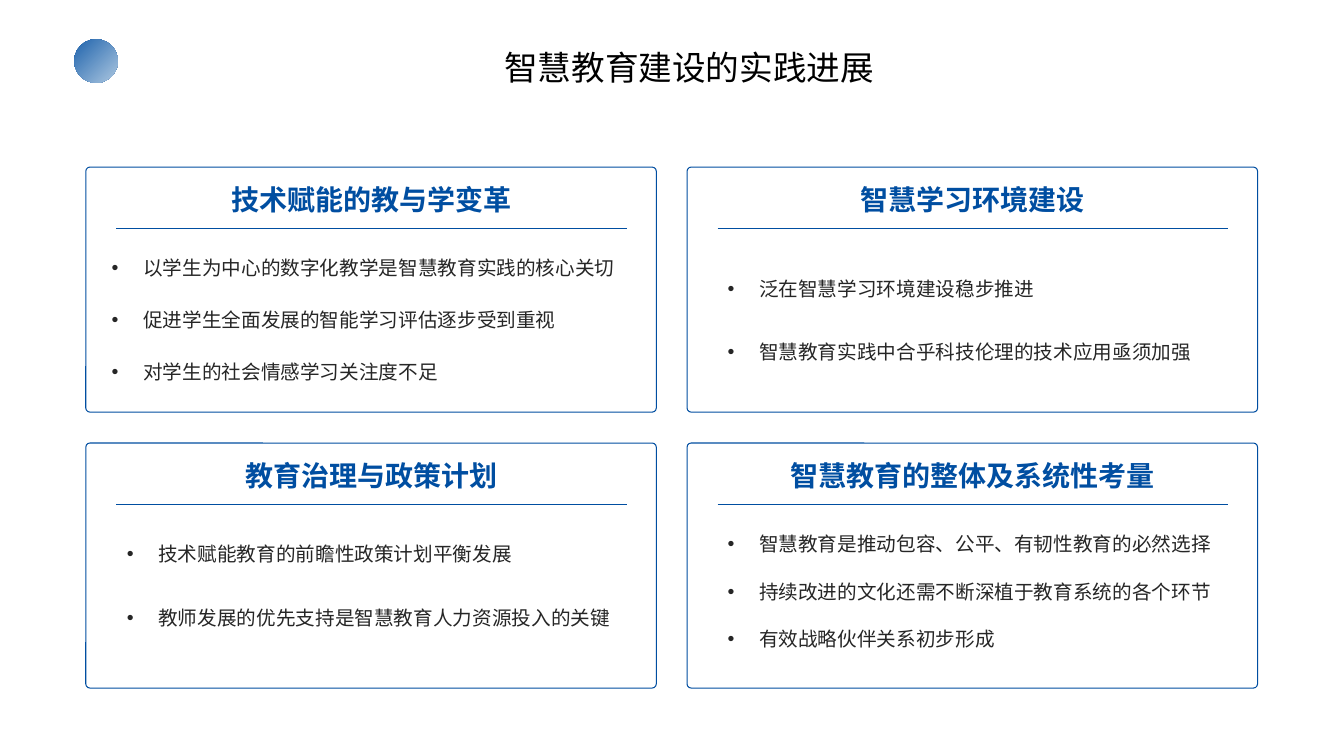
from dataclasses import dataclass

from lxml import etree
from pptx import Presentation
from pptx.dml.color import RGBColor
from pptx.enum.shapes import MSO_CONNECTOR, MSO_SHAPE
from pptx.enum.text import MSO_ANCHOR, PP_ALIGN
from pptx.oxml.ns import qn
from pptx.util import Pt

STRAIGHT = MSO_CONNECTOR.STRAIGHT
OVAL = MSO_SHAPE.OVAL
ROUNDED = MSO_SHAPE.ROUNDED_RECTANGLE
TOP, MIDDLE = MSO_ANCHOR.TOP, MSO_ANCHOR.MIDDLE
CENTER, JUSTIFY = PP_ALIGN.CENTER, PP_ALIGN.JUSTIFY


@dataclass(frozen=True)
class Theme:
    """Colours, fonts and type sizes of the slide."""
    blue: str = "004EA1"
    pale: str = "CCDDEC"
    white: str = "FFFFFF"
    black: str = "000000"
    ink: str = "262626"
    font: str = "Noto Sans CJK SC"
    title_font: str = "Times New Roman"
    title_size: float = 24
    heading_size: float = 20
    body_size: float = 14
    line_width: float = 0.75
    indent: float = 22.5


CARD_WIDTH, CARD_HEIGHT = 407.5, 175
CARD_LEFT, CARD_TOP = 61.3, 119.4
COLUMN_STEP, ROW_STEP = 429.5, 197.1

# heading, text offset from the card, text width, (line spacing, bullet)
CARDS = [
    ("技术赋能的教与学变革", (11.4, 51.2), 375, [
        (1.5, "以学生为中心的数字化教学是智慧教育实践的核心关切"),
        (1.5, "促进学生全面发展的智能学习评估逐步受到重视"),
        (1.5, "对学生的社会情感学习关注度不足")]),
    ("智慧学习环境建设", (21.8, 57.7), 364.5, [
        (2, "泛在智慧学习环境建设稳步推进"),
        (2, "智慧教育实践中合乎科技伦理的技术应用亟须加强")]),
    ("教育治理与政策计划", (22.2, 62.2), 364.5, [
        (1.3, "技术赋能教育的前瞻性政策计划平衡发展"),
        (2, "教师发展的优先支持是智慧教育人力资源投入的关键")]),
    ("智慧教育的整体及系统性考量", (21.8, 55), 364.5, [
        (1.3, "智慧教育是推动包容、公平、有韧性教育的必然选择"),
        (1.3, "持续改进的文化还需不断深植于教育系统的各个环节"),
        (1.3, "有效战略伙伴关系初步形成")]),
]


def write_text(paragraph, text, *, font, size, color, bold=False,
               align=CENTER, spacing=1.0, before=0, bullet_indent=0):
    """Fill a paragraph with formatted text."""
    paragraph.alignment = align
    paragraph.line_spacing = spacing
    paragraph.space_before = Pt(before)
    if bullet_indent:
        properties = paragraph._p.get_or_add_pPr()
        properties.set("marL", str(Pt(bullet_indent)))
        properties.set("indent", str(-Pt(bullet_indent)))
        etree.SubElement(properties, qn("a:buFont"), typeface="Arial")
        etree.SubElement(properties, qn("a:buChar"), char="•")
    run = paragraph.add_run()
    run.text = text
    run.font.name = font
    run.font.size = Pt(size)
    run.font.bold = bold
    run.font.color.rgb = RGBColor.from_string(color)
    etree.SubElement(run._r.get_or_add_rPr(), qn("a:ea"),
                     typeface=Theme.font)


class SlideBuilder:
    """Draws styled elements on one slide, measured in points."""

    def __init__(self, slide, theme):
        self.slide = slide
        self.theme = theme

    def shape(self, kind, left, top, width, height):
        """Add a preset shape without shadow or outline."""
        shape = self.slide.shapes.add_shape(
            kind, Pt(left), Pt(top), Pt(width), Pt(height))
        shape.shadow.inherit = False
        shape.line.fill.background()
        return shape

    def gradient_dot(self, left, top, diameter):
        """Add the round ornament that fades diagonally."""
        dot = self.shape(OVAL, left, top, diameter, diameter)
        dot.rotation = 45
        dot.fill.gradient()
        dot.fill.gradient_angle = 0
        colors = (self.theme.blue, self.theme.pale)
        for stop, color in zip(dot.fill.gradient_stops, colors):
            stop.color.rgb = RGBColor.from_string(color)

    def frame(self, left, top, width, height):
        """Add the outlined frame of a card."""
        frame = self.shape(ROUNDED, left, top, width, height)
        frame.adjustments[0] = 0.017
        frame.fill.solid()
        frame.fill.fore_color.rgb = RGBColor.from_string(self.theme.white)
        frame.line.color.rgb = RGBColor.from_string(self.theme.blue)
        frame.line.width = Pt(self.theme.line_width)

    def rule(self, left, top, width):
        """Add a horizontal line."""
        line = self.slide.shapes.add_connector(
            STRAIGHT, Pt(left), Pt(top), Pt(left + width), Pt(top))
        line.line.color.rgb = RGBColor.from_string(self.theme.blue)
        line.line.width = Pt(self.theme.line_width)
        etree.SubElement(line._element.spPr, qn("a:effectLst"))

    def text_frame(self, left, top, width, height, anchor=TOP):
        """Add a wrapping text box and return its text frame."""
        box = self.slide.shapes.add_textbox(
            Pt(left), Pt(top), Pt(width), Pt(height))
        box.text_frame.word_wrap = True
        box.text_frame.vertical_anchor = anchor
        return box.text_frame

    def title(self, text):
        """Add the slide title."""
        frame = self.text_frame(67, 33.1, 850.3, 28.1)
        write_text(frame.paragraphs[0], text, font=self.theme.title_font,
                   size=self.theme.title_size, color=self.theme.black,
                   spacing=0.9)

    def bullets(self, left, top, width, items):
        """Add a bullet list of (line spacing, text) pairs."""
        frame = self.text_frame(left, top, width, 106)
        for index, (spacing, text) in enumerate(items):
            paragraph = frame.add_paragraph() if index else frame.paragraphs[0]
            write_text(paragraph, text, font=self.theme.font,
                       size=self.theme.body_size, color=self.theme.ink,
                       align=JUSTIFY, spacing=spacing,
                       before=12 if index else 0,
                       bullet_indent=self.theme.indent)

    def card(self, left, top, heading, offset, text_width, items):
        """Add a framed card with heading, rule and bullets."""
        self.frame(left, top, CARD_WIDTH, CARD_HEIGHT)
        self.rule(left + 21.8, top + 43.8, 364.8)
        frame = self.text_frame(left + 21.8, top + 6, 364.5, 33.8, MIDDLE)
        write_text(frame.paragraphs[0], heading, font=self.theme.font,
                   size=self.theme.heading_size, color=self.theme.blue,
                   bold=True)
        self.bullets(left + offset[0], top + offset[1], text_width, items)


def main():
    """Build and save the slide."""
    presentation = Presentation()
    presentation.slide_width, presentation.slide_height = Pt(960), Pt(540)
    slide = presentation.slides.add_slide(presentation.slide_layouts[6])
    builder = SlideBuilder(slide, Theme())
    builder.title("智慧教育建设的实践进展")
    builder.gradient_dot(53, 28, 31.2)
    for index, card in enumerate(CARDS):
        row, column = divmod(index, 2)
        builder.card(CARD_LEFT + column * COLUMN_STEP,
                     CARD_TOP + row * ROW_STEP, *card)
    presentation.save("out.pptx")


if __name__ == "__main__":
    main()
